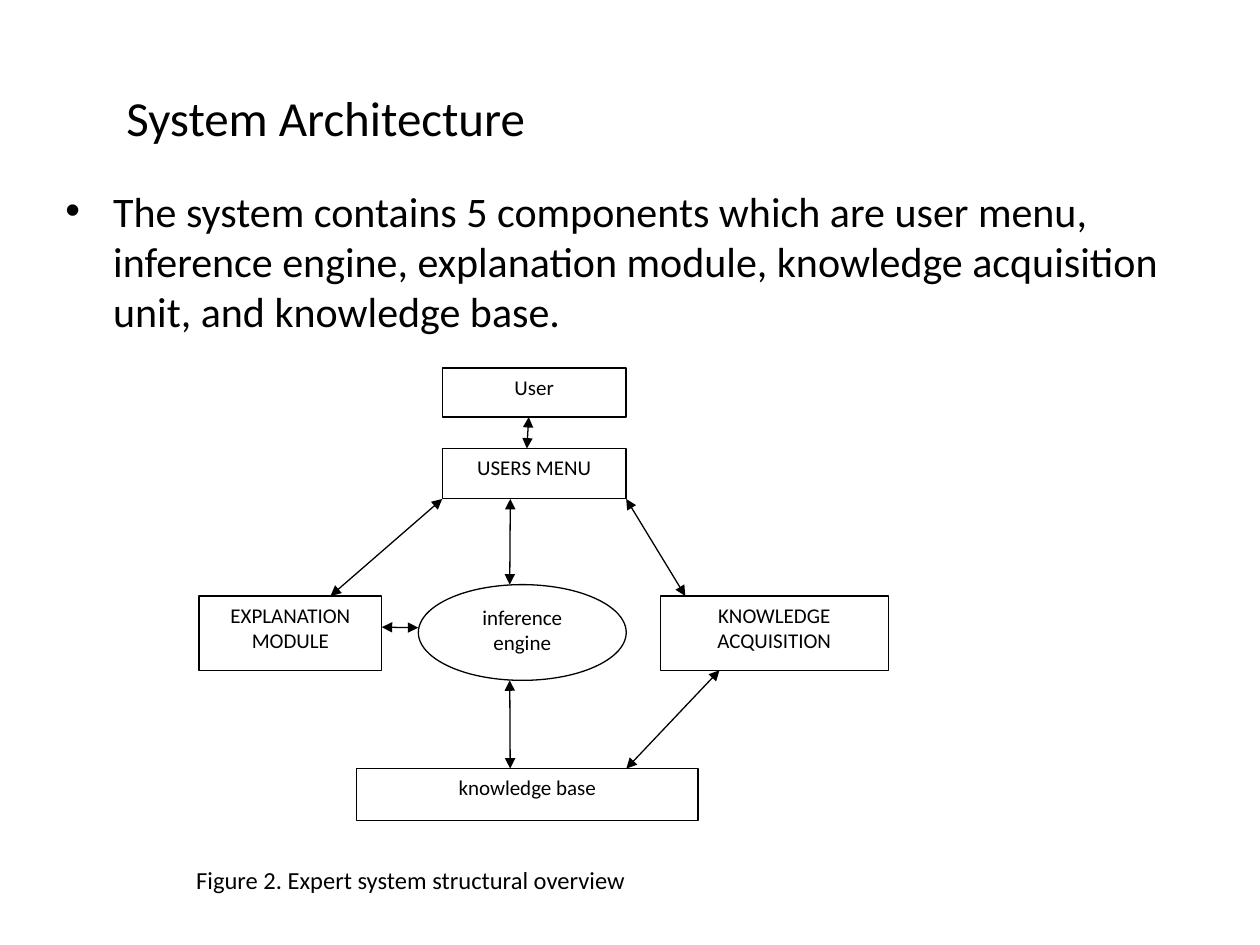
from lxml import etree
from pptx import Presentation
from pptx.dml.color import RGBColor
from pptx.enum.shapes import MSO_CONNECTOR, MSO_SHAPE
from pptx.enum.text import MSO_ANCHOR, PP_ALIGN
from pptx.oxml.ns import qn
from pptx.util import Inches, Pt

RECT, OVAL = MSO_SHAPE.RECTANGLE, MSO_SHAPE.OVAL
STRAIGHT = MSO_CONNECTOR.STRAIGHT
TOP, MIDDLE = MSO_ANCHOR.TOP, MSO_ANCHOR.MIDDLE
LEFT, CENTER = PP_ALIGN.LEFT, PP_ALIGN.CENTER
FONT, INK, PAPER = "Calibri", "000000", "FFFFFF"

TITLE = "System Architecture"
BODY = ("The system contains 5 components which are user menu, inference engine, "
        "explanation module, knowledge acquisition unit, and knowledge base.")
CAPTION = "Figure 2. Expert system structural overview"

# name: (text, shape, (left, top, width, height))
NODES = {
    "user": ("User", RECT, (3.51, 2.92, 1.46, 0.39)),
    "menu": ("USERS MENU", RECT, (3.51, 3.56, 1.46, 0.4)),
    "explain": ("EXPLANATION MODULE", RECT, (1.58, 4.73, 1.45, 0.59)),
    "acquire": ("KNOWLEDGE ACQUISITION", RECT, (5.24, 4.73, 1.81, 0.59)),
    "engine": ("inference engine", OVAL, (3.32, 4.64, 1.65, 0.76)),
    "base": ("knowledge base", RECT, (2.83, 6.1, 2.71, 0.41)),
}
# Each end: node, share of its width, share of its height
LINKS = [
    (("user", 0.47, 1), ("menu", 0.46, 0)),
    (("menu", 0.37, 1), ("engine", 0.44, 0)),
    (("menu", 1, 1), ("acquire", 0.11, 0)),
    (("explain", 0.72, 0), ("menu", 0, 1)),
    (("explain", 1, 0.42), ("engine", 0, 0.45)),
    (("engine", 0.44, 1), ("base", 0.45, 0)),
    (("acquire", 0.26, 1), ("base", 0.79, 0)),
]


def color(value):
    return RGBColor.from_string(value)


def write(sp, text, size, align=CENTER, anchor=TOP, **spacing):
    tf = sp.text_frame
    tf.word_wrap = True
    tf.vertical_anchor = anchor
    p = tf.paragraphs[0]
    p.alignment = align
    for name, value in spacing.items():
        setattr(p, name, Pt(value))
    r = p.add_run()
    r.text = text
    for name, value in {"name": FONT, "size": Pt(size)}.items():
        setattr(r.font, name, value)
    r.font.color.rgb = color(INK)
    return p


def add_text(s, box, *args, **formats):
    return write(s.shapes.add_textbox(*map(Inches, box)), *args, **formats)


def add_bullet(p, indent):
    pPr = p._p.get_or_add_pPr()
    pPr.set("marL", str(Inches(indent)))
    pPr.set("indent", str(-Inches(indent)))
    etree.SubElement(pPr, qn("a:buFont"), typeface="Arial")
    etree.SubElement(pPr, qn("a:buChar"), char="•")


def outline(sp):
    sp.line.color.rgb = color(INK)
    sp.line.width = Pt(0.75)


def add_node(s, text, kind, box):
    sp = s.shapes.add_shape(kind, *map(Inches, box))
    sp.shadow.inherit = False
    sp.fill.solid()
    sp.fill.fore_color.rgb = color(PAPER)
    outline(sp)
    write(sp, text, 12, space_after=10)


def end_point(name, across, down):
    left, top, width, height = NODES[name][2]
    return Inches(left + across * width), Inches(top + down * height)


def add_link(s, start, end):
    line = s.shapes.add_connector(STRAIGHT, *end_point(*start), *end_point(*end))
    outline(line)
    ln = line.line._get_or_add_ln()
    for tag in ("a:headEnd", "a:tailEnd"):
        etree.SubElement(ln, qn(tag), type="triangle")
    etree.SubElement(line._element.spPr, qn("a:effectLst"))


prs = Presentation()
prs.slide_width, prs.slide_height = Inches(10), Inches(7.5)
s = prs.slides.add_slide(prs.slide_layouts[6])

# Heading and bullet
add_text(s, (0.5, 0.3, 4.17, 1.25), TITLE, 28, anchor=MIDDLE)
add_bullet(add_text(s, (0.42, 1.42, 9, 1.4), BODY, 24, align=LEFT, space_before=4.8), 0.38)

# Diagram
for node in NODES.values():
    add_node(s, *node)
for link in LINKS:
    add_link(s, *link)

# Caption
add_text(s, (0.8, 6.81, 4.92, 0.34), CAPTION, 14, anchor=MIDDLE)

prs.save("out.pptx")
